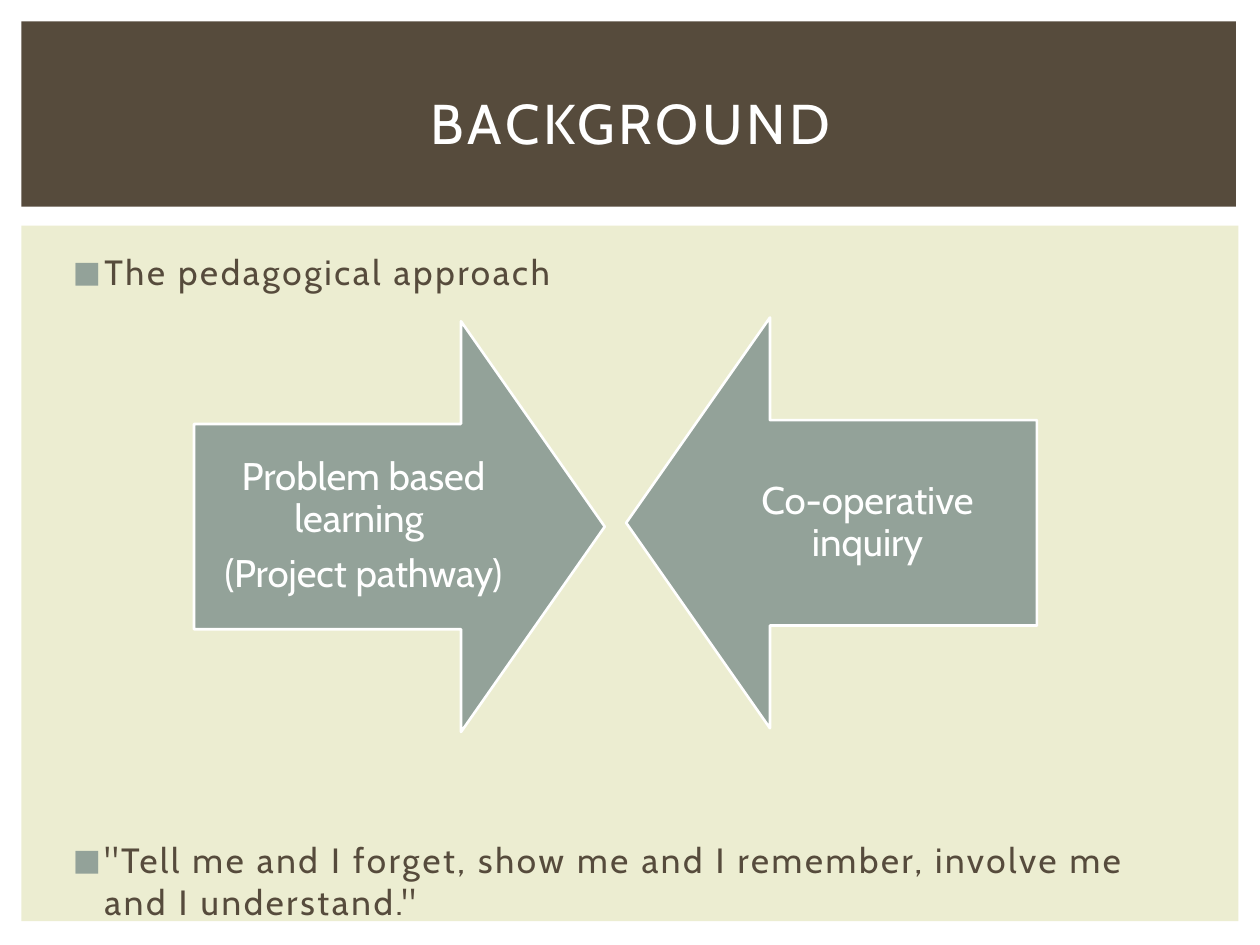
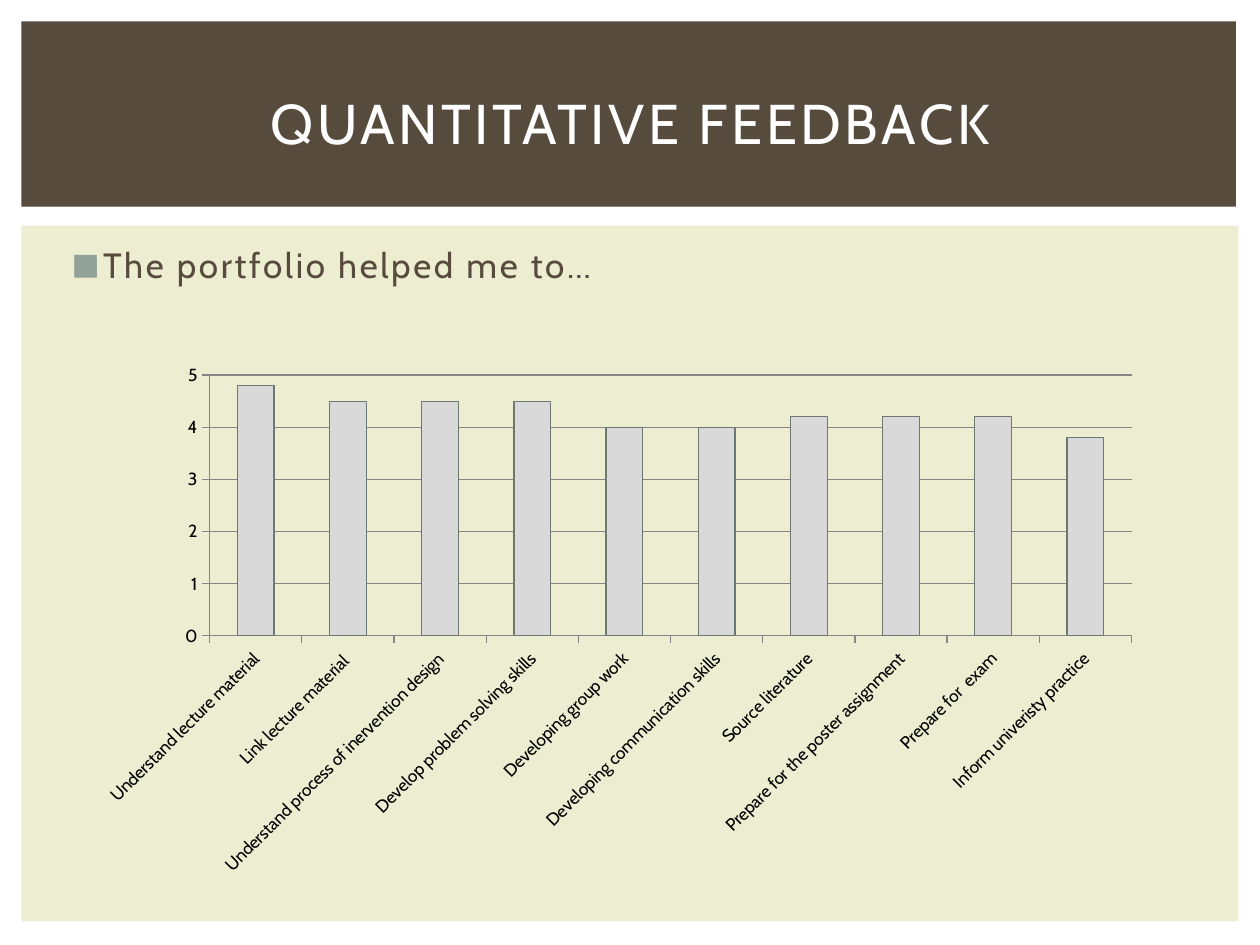
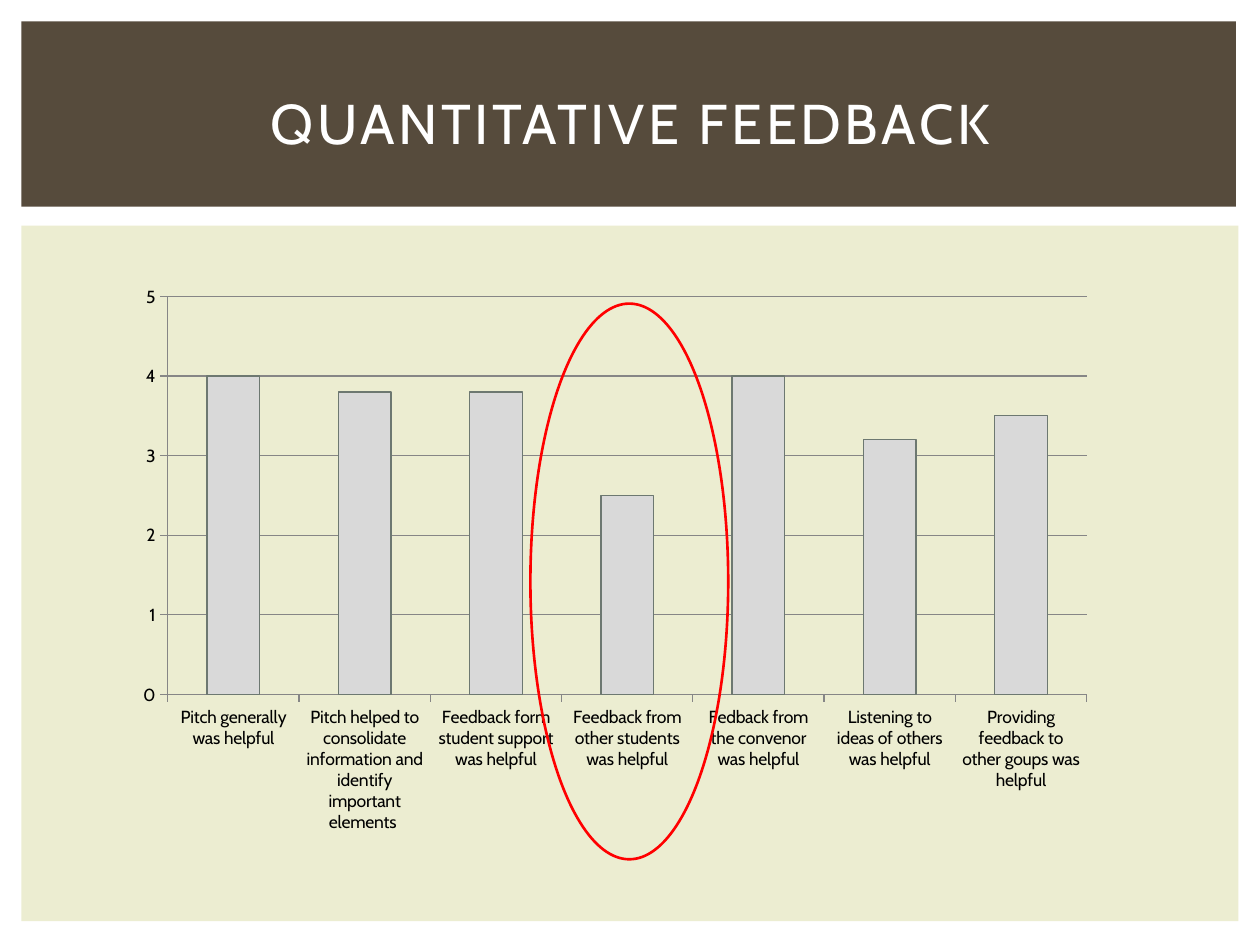
from lxml import etree
from pptx import Presentation
from pptx.chart.data import CategoryChartData
from pptx.dml.color import RGBColor
from pptx.enum.chart import XL_CHART_TYPE, XL_TICK_MARK
from pptx.enum.shapes import MSO_SHAPE
from pptx.enum.text import MSO_ANCHOR, MSO_AUTO_SIZE, PP_ALIGN
from pptx.oxml.ns import qn
from pptx.util import Pt

COLUMNS = XL_CHART_TYPE.COLUMN_CLUSTERED
TICK_OUT, TICK_NONE = XL_TICK_MARK.OUTSIDE, XL_TICK_MARK.NONE
RECTANGLE, ELLIPSE = MSO_SHAPE.RECTANGLE, MSO_SHAPE.OVAL
RIGHT_ARROW, LEFT_ARROW = MSO_SHAPE.RIGHT_ARROW, MSO_SHAPE.LEFT_ARROW
TOP, MIDDLE = MSO_ANCHOR.TOP, MSO_ANCHOR.MIDDLE
NO_FIT = MSO_AUTO_SIZE.NONE
LEFT, CENTER = PP_ALIGN.LEFT, PP_ALIGN.CENTER

FONT = "Cabin"
BROWN, CREAM, SAGE, WHITE = "564B3C", "ECEDD1", "93A299", "FFFFFF"
BAR_GREY, BAR_EDGE, AXIS_GREY = "D9D9D9", "6D7871", "868686"
BLACK, RED = "000000", "FF0000"

TITLE_PLACE = {"left": Pt(30.24), "top": Pt(28.08), "width": Pt(660.24), "height": Pt(82.8)}
TITLE_FRAME = {"vertical_anchor": MIDDLE, "word_wrap": True, "auto_size": NO_FIT}
TITLE_FONT = {"name": FONT, "size": Pt(32), "bold": False}
BODY_FRAME = {"vertical_anchor": TOP, "word_wrap": True, "auto_size": NO_FIT}
BODY_FONT = {"name": FONT, "size": Pt(20)}
ARROW_INSET = Pt(12.24)
ARROW_FRAME = {"vertical_anchor": MIDDLE, "word_wrap": True,
               "margin_left": ARROW_INSET, "margin_right": ARROW_INSET,
               "margin_top": ARROW_INSET, "margin_bottom": ARROW_INSET}
ARROW_FONT = {"name": FONT, "size": Pt(22)}
ARROW_PARAGRAPH = {"alignment": CENTER, "line_spacing": 0.9, "space_after": Pt(7.7)}
CHART_FONT = {"name": FONT, "size": Pt(10)}
SCORE_SCALE = {"minimum_scale": 0, "maximum_scale": 5, "major_unit": 1,
               "has_major_gridlines": True}


def rgb(hex_value):
    return RGBColor.from_string(hex_value)


def write(frame, lines, frame_format, font_format, paragraph_format, color, spacing=0):
    for key, value in frame_format.items():
        setattr(frame, key, value)
    for index, line in enumerate(lines):
        paragraph = frame.add_paragraph() if index else frame.paragraphs[0]
        for key, value in paragraph_format.items():
            setattr(paragraph, key, value)
        run = paragraph.add_run()
        run.text = line
        for key, value in font_format.items():
            setattr(run.font, key, value)
        run.font.color.rgb = rgb(color)
        if spacing:
            run._r.get_or_add_rPr().set("spc", str(spacing))


deck = Presentation()
deck.slide_width, deck.slide_height = Pt(720), Pt(540)
title_layout = deck.slide_layouts[5]

slides = []
for heading in ("BACKGROUND", "QUANTITATIVE FEEDBACK", "QUANTITATIVE FEEDBACK"):
    slide = deck.slides.add_slide(title_layout)
    for key, value in TITLE_PLACE.items():
        setattr(slide.shapes.title, key, value)
    write(slide.shapes.title.text_frame, [heading], TITLE_FRAME, TITLE_FONT,
          {"alignment": CENTER}, WHITE, 200)
    slides.append(slide)
background, portfolio, pitch = slides

bands = [(128.88, 695.52, 397.44, CREAM), (12.24, 694.08, 105.84, BROWN)]
for position, (top, width, height, color) in enumerate(bands, start=2):
    band = background.shapes.add_shape(RECTANGLE, Pt(12.24), Pt(top), Pt(width), Pt(height))
    band.shadow.inherit = False
    band.fill.solid()
    band.fill.fore_color.rgb = rgb(color)
    band.line.fill.background()
    title_layout.shapes.element.insert(position, band.element)

bullet_texts = [
    (background, 30.96, 139.68, 396.72, [
        "The pedagogical approach",
        '"Tell me and I forget, show me and I remember, involve me and I understand."']),
    (portfolio, 30.24, 135.36, 347.04, ["The portfolio helped me to…"]),
]
for slide, left, top, height, lines in bullet_texts:
    body = slide.shapes.add_textbox(Pt(left), Pt(top), Pt(661), Pt(height)).text_frame
    write(body, lines, BODY_FRAME, BODY_FONT, {"alignment": LEFT}, BROWN, 150)
    for paragraph in body.paragraphs[1:]:
        paragraph.space_before = Pt(312)
    for paragraph in body.paragraphs:
        properties = paragraph._p.get_or_add_pPr()
        properties.set("marL", str(Pt(21.6)))
        properties.set("indent", str(-Pt(18)))
        bullet_color = etree.SubElement(properties, qn("a:buClr"))
        etree.SubElement(bullet_color, qn("a:srgbClr"), val=SAGE)
        etree.SubElement(properties, qn("a:buSzPct"), val="85000")
        etree.SubElement(properties, qn("a:buFont"), typeface=FONT)
        etree.SubElement(properties, qn("a:buChar"), char="■")

approaches = [
    (RIGHT_ARROW, 110.88, 183.6, ["Problem based learning ", "(Project pathway)"]),
    (LEFT_ARROW, 357.84, 181.44, ["Co-operative inquiry"]),
]
for direction, left, top, lines in approaches:
    approach = background.shapes.add_shape(direction, Pt(left), Pt(top), Pt(234.72), Pt(234.72))
    approach.adjustments[0], approach.adjustments[1] = 0.5, 0.35
    approach.shadow.inherit = False
    approach.fill.solid()
    approach.fill.fore_color.rgb = rgb(SAGE)
    approach.line.color.rgb = rgb(WHITE)
    approach.line.width = Pt(1.5)
    write(approach.text_frame, lines, ARROW_FRAME, ARROW_FONT, ARROW_PARAGRAPH, WHITE)

portfolio_scores = {
    "Understand lecture material": 4.8,
    "Link lecture material ": 4.5,
    "Understand process of inervention design": 4.5,
    "Develop problem solving skills": 4.5,
    "Developing group work": 4,
    "Developing communication skills": 4,
    "Source literature": 4.2,
    "Prepare for the poster assignment": 4.2,
    "Prepare for  exam": 4.2,
    "Inform univeristy practice": 3.8,
}
pitch_scores = {
    "Pitch generally was helpful": 4,
    "Pitch helped to consolidate information and identify important elements ": 3.8,
    "Feedback form student support was helpful": 3.8,
    "Feedback from other students was helpful": 2.5,
    "Fedback from the convenor was helpful": 4,
    "Listening to ideas of others was helpful": 3.2,
    "Providing feedback to other goups was helpful": 3.5,
}
feedback_charts = [
    (portfolio, 48.24, 202.32, 610.56, 303.84, portfolio_scores),
    (pitch, 70.56, 156.96, 561.6, 325.44, pitch_scores),
]
for slide, left, top, width, height, scores in feedback_charts:
    data = CategoryChartData()
    data.categories = list(scores)
    data.add_series("Series 1", list(scores.values()))
    chart = slide.shapes.add_chart(
        COLUMNS, Pt(left), Pt(top), Pt(width), Pt(height), data).chart
    chart.has_title = chart.has_legend = False
    for key, value in CHART_FONT.items():
        setattr(chart.font, key, value)
    chart.font.color.rgb = rgb(BLACK)
    for key, value in SCORE_SCALE.items():
        setattr(chart.value_axis, key, value)
    for axis in (chart.category_axis, chart.value_axis):
        axis.major_tick_mark, axis.minor_tick_mark = TICK_OUT, TICK_NONE
    for rule in (chart.category_axis, chart.value_axis, chart.value_axis.major_gridlines):
        rule.format.line.color.rgb = rgb(AXIS_GREY)
        rule.format.line.width = Pt(0.75)
    plot = chart.plots[0]
    plot.gap_width = 150
    plot.vary_by_categories = False
    bars = plot.series[0].format
    bars.fill.solid()
    bars.fill.fore_color.rgb = rgb(BAR_GREY)
    bars.line.color.rgb = rgb(BAR_EDGE)
    bars.line.width = Pt(0.75)

lowest_score = pitch.shapes.add_shape(ELLIPSE, Pt(303.12), Pt(173.52), Pt(113.04), Pt(317.52))
lowest_score.shadow.inherit = False
lowest_score.fill.background()
lowest_score.line.color.rgb = rgb(RED)
lowest_score.line.width = Pt(1.5)

deck.save("out.pptx")
